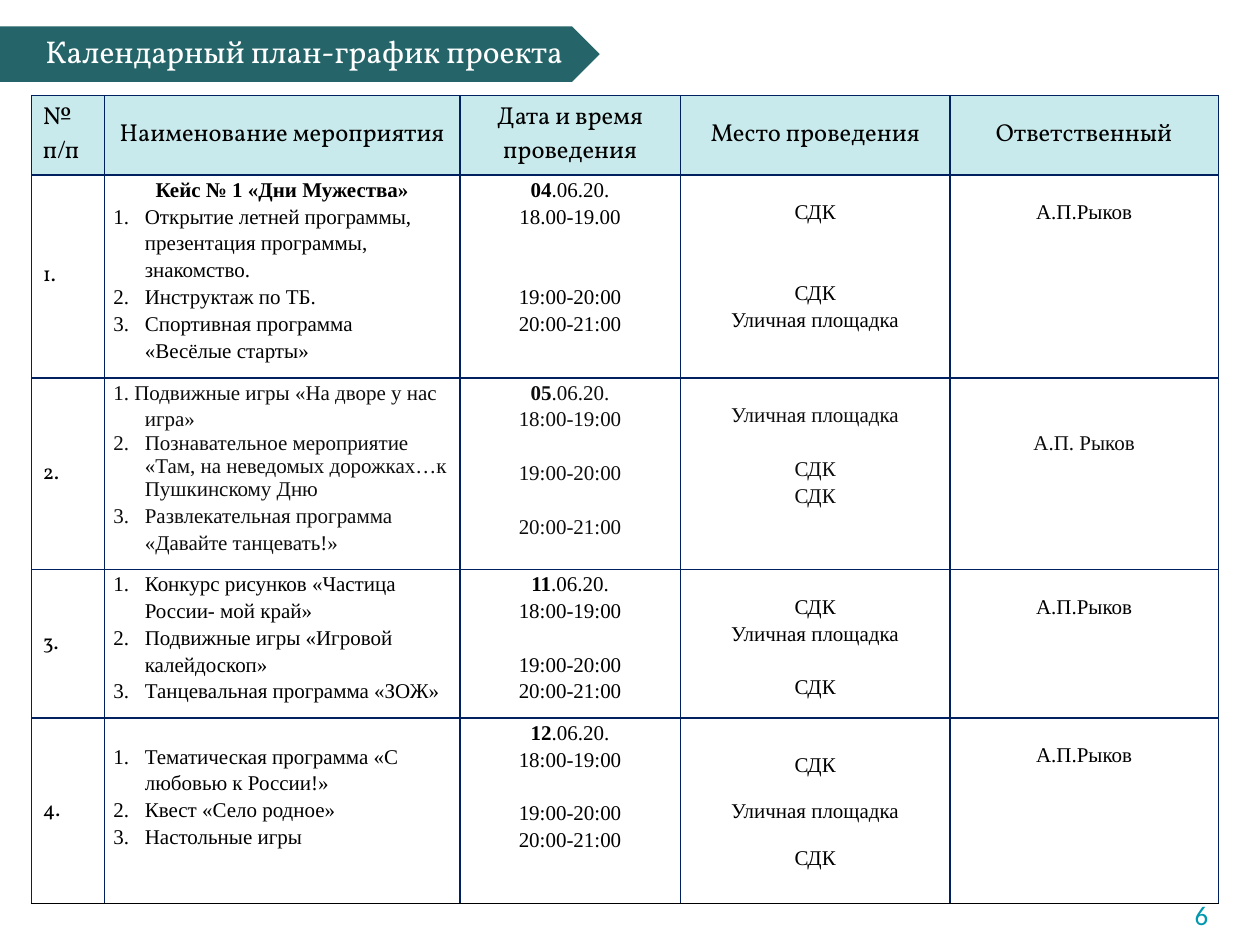
from dataclasses import dataclass
from typing import NamedTuple

from lxml.etree import SubElement
from pptx import Presentation
from pptx.dml.color import RGBColor as Rgb
from pptx.enum.shapes import MSO_SHAPE as Form
from pptx.enum.text import MSO_ANCHOR as Anchor, PP_ALIGN as Align
from pptx.oxml.ns import qn
from pptx.util import Inches, Pt

# Colours and fonts
NAVY = Rgb(0x00, 0x20, 0x60)
BLACK = Rgb(0x00, 0x00, 0x00)
SOFT = Rgb(0x0D, 0x0D, 0x0D)
WHITE = Rgb(0xFF, 0xFF, 0xFF)
PALE = Rgb(0xC9, 0xEA, 0xEC)
TEAL = Rgb(0x25, 0x65, 0x69)
AQUA = Rgb(0x00, 0x98, 0xAF)
HEAD, BODY, PAGE = "Vollkorn", "Times New Roman", "Calibri"

# Slide size in inches; column and row sizes as percent of it
WIDTH, HEIGHT = 10, 7.5
COLS = (5.8, 28.2, 17.5, 21.4, 21.3)
ROWS = (8.4, 20.67, 20, 15.73, 19.6)
ROW_GAP = 15.3  # points, one text line
DROP = 0.18     # inches, one skipped line at the top of a cell


def across(share: float) -> int:
    return Inches(WIDTH * share / 100)


def down(share: float) -> int:
    return Inches(HEIGHT * share / 100)


class Line(NamedTuple):
    text: str
    gap: float = 0       # skipped lines before
    bold: str = ""       # bold opening
    start: int = 0       # first number of the list, 0 for none
    lead: float = 1.15
    hang: bool = False


class Block(NamedTuple):
    lines: list[Line]
    top: float = 0


@dataclass
class Day:
    tasks: Block
    times: Block
    sites: Block
    chief: Block
    ink: Rgb = BLACK


def item(text: str, start: int = 1, lead: float = 1.15) -> Line:
    return Line(text, start=start, lead=lead, hang=True)


def date(day: str) -> Line:
    return Line(".06.20.", bold=day)


TITLE = "Календарный план-график проекта"
HEADS = ("№\nп/п", "Наименование мероприятия", "Дата и время проведения",
         "Место проведения", "Ответственный")
YARD, CLUB, LEAD = "Уличная площадка", "СДК", "А.П.Рыков"
SIX, SEVEN, EIGHT = "18:00-19:00", "19:00-20:00", "20:00-21:00"
CHIEF = Block([Line(LEAD)], DROP)

DAYS = (
    Day(Block([Line("", bold="Кейс № 1 «Дни Мужества»"),
               item("Открытие летней программы, презентация программы, знакомство."),
               item("Инструктаж по ТБ."),
               item("Спортивная программа\v«Весёлые старты»")]),
        Block([date("04"), Line("18.00-19.00"), Line(SEVEN, 2), Line(EIGHT)]),
        Block([Line(CLUB), Line(CLUB, 2), Line(YARD)], DROP),
        CHIEF),
    Day(Block([Line("1. Подвижные игры «На дворе у нас игра»", hang=True),
               item("Познавательное мероприятие «Там, на неведомых дорожках…к "
                    "Пушкинскому Дню", 2, 1),
               item("Развлекательная программа «Давайте танцевать!»", 2)]),
        Block([date("05"), Line(SIX), Line(SEVEN, 1), Line(EIGHT, 1)]),
        Block([Line(YARD), Line(CLUB, 1), Line(CLUB)], DROP),
        Block([Line("А.П. Рыков")], 0.4),
        SOFT),
    Day(Block([item("Конкурс рисунков «Частица России- мой край»"),
               item("Подвижные игры «Игровой калейдоскоп»"),
               item("Танцевальная программа «ЗОЖ»")]),
        Block([date("11"), Line(SIX), Line(SEVEN, 1), Line(EIGHT)]),
        Block([Line(CLUB), Line(YARD), Line(CLUB, 1)], DROP),
        CHIEF),
    Day(Block([item("Тематическая программа «С любовью к России!»"),
               item("Квест «Село родное»"),
               item("Настольные игры")], 0.19),
        Block([date("12"), Line(SIX), Line(SEVEN, 1), Line(EIGHT)]),
        Block([Line(CLUB, lead=1), Line(YARD, 0.88, lead=1),
               Line(CLUB, 0.88, lead=1)], 0.28),
        CHIEF),
)


def style(para, face: str, size: float, ink: Rgb) -> None:
    font = para.font
    font.name, font.size, font.color.rgb = face, Pt(size), ink


def pad(box, side: float, top: float, foot: float) -> None:
    box.margin_left = box.margin_right = Inches(side)
    box.margin_top, box.margin_bottom = Inches(top), Inches(foot)


def edge(cell, last: bool) -> None:
    props = cell._tc.get_or_add_tcPr()
    for side in "LRTB":
        line = SubElement(props, qn(f"a:ln{side}"), w=str(Pt(1)))
        fill = SubElement(line, qn("a:solidFill"))
        ink = BLACK if last and side == "B" else NAVY
        SubElement(fill, qn("a:srgbClr"), val=str(ink))


def paint(cell, fill: Rgb, last: bool = False) -> None:
    edge(cell, last)
    cell.fill.solid()
    cell.fill.fore_color.rgb = fill


def label(cell, text: str, size: float, align: Align) -> None:
    pad(cell, 0.09, 0.04, 0.04)
    cell.vertical_anchor = Anchor.MIDDLE
    cell.text = text
    for para in cell.text_frame.paragraphs:
        para.alignment = align
        style(para, HEAD, size, BLACK)


def write(para, line: Line, ink: Rgb) -> None:
    para.alignment = Align.LEFT if line.hang else Align.CENTER
    para.line_spacing = line.lead
    if line.gap:
        para.space_before = Pt(line.gap * ROW_GAP)
    props = para._p.get_or_add_pPr()
    if line.hang:
        props.set("marL", str(Inches(0.25)))
        props.set("indent", str(-Inches(0.25)))
    if line.start:
        num = SubElement(props, qn("a:buAutoNum"), type="arabicPeriod")
        if line.start > 1:
            num.set("startAt", str(line.start))
    style(para, BODY, 12, ink)
    if line.bold:
        run = para.add_run()
        run.text, run.font.bold = line.bold, True
    if line.text:
        for i, part in enumerate(line.text.split("\v")):
            if i:
                para.add_line_break()
            para.add_run().text = part


def fill_in(cell, block: Block, ink: Rgb) -> None:
    pad(cell, 0.07, block.top, 0)
    frame = cell.text_frame
    for i, line in enumerate(block.lines):
        write(frame.add_paragraph() if i else frame.paragraphs[0], line, ink)


def plan(slide) -> None:
    table = slide.shapes.add_table(
        len(ROWS), len(COLS), across(2.5), down(10.13),
        across(sum(COLS)), down(sum(ROWS))).table
    table.first_row = table.horz_banding = False
    for col, share in zip(table.columns, COLS):
        col.width = across(share)
    for row, share in zip(table.rows, ROWS):
        row.height = down(share)
    for c, text in enumerate(HEADS):
        paint(table.cell(0, c), PALE)
        label(table.cell(0, c), text, 14, Align.CENTER if c else Align.LEFT)
    for r, day in enumerate(DAYS, 1):
        for c in range(len(COLS)):
            paint(table.cell(r, c), WHITE, r == len(DAYS))
        label(table.cell(r, 0), f"{r}.", 12, Align.LEFT)
        for c, block in enumerate((day.tasks, day.times, day.sites, day.chief), 1):
            fill_in(table.cell(r, c), block, day.ink)


def note(slide, text: str, spot: tuple, face: str, size: float, ink: Rgb):
    left, top, wide, high = spot
    box = slide.shapes.add_textbox(across(left), down(top), across(wide), down(high))
    frame = box.text_frame
    frame.word_wrap = True
    para = frame.paragraphs[0]
    para.text = text
    style(para, face, size, ink)
    return frame


def main() -> None:
    deck = Presentation()
    deck.slide_width, deck.slide_height = Inches(WIDTH), Inches(HEIGHT)
    slide = deck.slides.add_slide(deck.slide_layouts[6])
    # Page number
    pad(note(slide, "6", (93.9, 94.53, 4.5, 3.6), PAGE, 15.4, AQUA), 0.09, 0.04, 0.04)
    # Schedule
    plan(slide)
    # Title banner
    flag = slide.shapes.add_shape(Form.PENTAGON, 0, down(2.8), across(47.6), down(5.87))
    flag.shadow.inherit = False
    flag.fill.solid()
    flag.fill.fore_color.rgb = TEAL
    flag.line.fill.background()
    head = note(slide, TITLE, (2.5, 3.6, 48.7, 4.27), HEAD, 18, WHITE)
    pad(head, 0.11, 0.06, 0.06)
    head.vertical_anchor = Anchor.MIDDLE
    head.paragraphs[0].line_spacing = 0.85
    deck.save("out.pptx")


if __name__ == "__main__":
    main()
